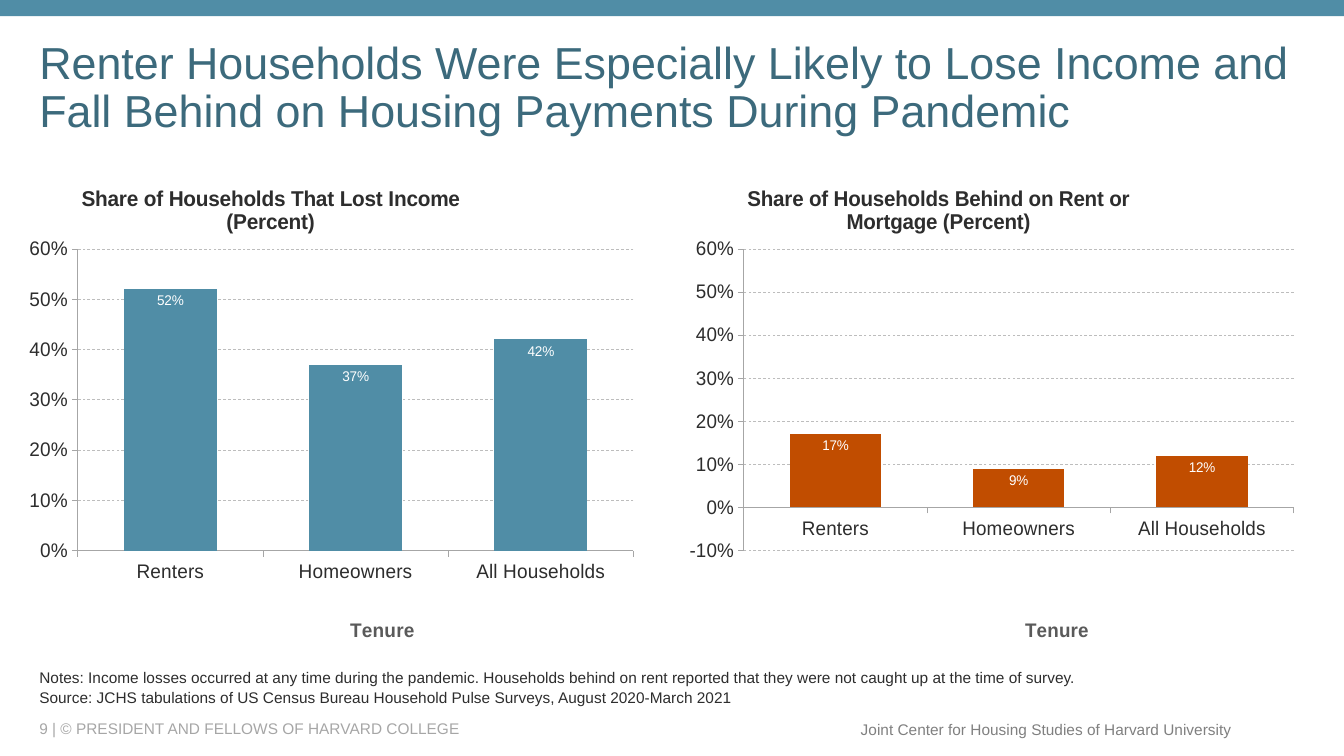
from pptx import Presentation
from pptx.chart.data import CategoryChartData
from pptx.dml.color import RGBColor
from pptx.enum.chart import XL_CHART_TYPE as ChartType, XL_LABEL_POSITION as LabelPosition
from pptx.enum.chart import XL_TICK_MARK as TickMark
from pptx.enum.dml import MSO_LINE as Dash
from pptx.enum.shapes import MSO_SHAPE as Shape
from pptx.enum.text import MSO_ANCHOR as Anchor, PP_ALIGN as Align
from pptx.oxml import parse_xml
from pptx.oxml.ns import nsdecls
from pptx.util import Pt

TEAL = RGBColor(0x50, 0x8D, 0xA6)
DARK_TEAL = RGBColor(0x3C, 0x6A, 0x7C)
ORANGE = RGBColor(0xC1, 0x4D, 0x00)
INK = RGBColor(0x2D, 0x2D, 0x2D)
CHARCOAL = RGBColor(0x5A, 0x5A, 0x5A)
GRAY = RGBColor(0x80, 0x80, 0x80)
LIGHT_GRAY = RGBColor(0xA6, 0xA6, 0xA6)
GRID_GRAY = RGBColor(0xBD, 0xBD, 0xBD)
WHITE = RGBColor(0xFF, 0xFF, 0xFF)

TENURES = ["Renters", "Homeowners", "All Households"]


class SlideBuilder:
    """Holds the text style and the page being filled."""

    font_name = "Arial"

    def __init__(self, page):
        self.page = page

    def style_font(self, font, size, color, bold=False):
        values = {"name": self.font_name, "size": Pt(size), "bold": bold}
        for name, value in values.items():
            setattr(font, name, value)
        font.color.rgb = color

    def bar(self, left, top, width, height, color):
        bar = self.page.shapes.add_shape(
            Shape.RECTANGLE, Pt(left), Pt(top), Pt(width), Pt(height))
        bar.shadow.inherit = False
        bar.fill.solid()
        bar.fill.fore_color.rgb = color
        bar.line.fill.background()

    def text(self, bounds, lines, size, color, anchor=Anchor.MIDDLE, wrap=True, **formats):
        box = self.page.shapes.add_textbox(*map(Pt, bounds))
        frame = box.text_frame
        frame.word_wrap = wrap
        frame.vertical_anchor = anchor
        for index, line in enumerate(lines):
            para = frame.paragraphs[0] if index == 0 else frame.add_paragraph()
            for name, value in formats.items():
                setattr(para, name, value)
            if index:
                para.space_before = Pt(1)
            span = para.add_run()
            span.text = line
            self.style_font(span.font, size, color)

    def layout(self, x, y, width=None, height=None):
        """Manual chart layout, as fractions of the chart area."""
        inner = '<c:layoutTarget val="inner"/>' if width else ""
        size = f'<c:w val="{width}"/><c:h val="{height}"/>' if width else ""
        return parse_xml(
            f'<c:layout {nsdecls("c")}><c:manualLayout>{inner}'
            '<c:xMode val="edge"/><c:yMode val="edge"/>'
            f'<c:x val="{x}"/><c:y val="{y}"/>{size}</c:manualLayout></c:layout>')

    def chart_title(self, title, text, size, color, x, y):
        para = title.text_frame.paragraphs[0]
        span = para.add_run()
        span.text = text
        para.alignment = Align.CENTER
        self.style_font(span.font, size, color, bold=True)
        element = title._element
        for old in element.xpath("c:layout"):
            element.remove(old)
        element.xpath("c:tx")[0].addnext(self.layout(x, y))

    def axis(self, axis):
        axis.major_tick_mark = TickMark.OUTSIDE
        axis.minor_tick_mark = TickMark.NONE
        self.style_font(axis.tick_labels.font, 14, INK)
        axis.format.line.color.rgb = LIGHT_GRAY
        axis.format.line.width = Pt(0.5)

    def column_chart(self, left, title, values, color, minimum, tenure_x):
        data = CategoryChartData(number_format="0%")
        data.categories = TENURES
        data.add_series("Series 1", values)
        chart = self.page.shapes.add_chart(
            ChartType.COLUMN_CLUSTERED, Pt(left), Pt(118.8), Pt(440), Pt(347.5), data).chart
        self.style_font(chart.font, 10, CHARCOAL)
        chart.has_legend = False
        chart.has_title = True
        self.chart_title(chart.chart_title, title, 15.3, INK, 0.05, 0.03)

        # Axes and gridlines
        tenure, share = chart.category_axis, chart.value_axis
        self.axis(tenure)
        self.axis(share)
        self.chart_title(tenure.axis_title, "Tenure", 14, CHARCOAL, tenure_x, 0.92)
        scale = {"minimum_scale": minimum, "maximum_scale": 0.6, "major_unit": 0.1}
        for name, value in scale.items():
            setattr(share, name, value)
        share.tick_labels.number_format = "0%"
        share.tick_labels.number_format_is_linked = False
        grid = share.major_gridlines.format.line
        grid.color.rgb = GRID_GRAY
        grid.width = Pt(0.5)
        grid.dash_style = Dash.DASH

        # Columns and their labels
        plot = chart.plots[0]
        plot.gap_width = 100
        plot.vary_by_categories = False
        series = plot.series[0]
        series.format.fill.solid()
        series.format.fill.fore_color.rgb = color
        labels = series.data_labels
        formats = {"show_value": True, "number_format": "0%",
                   "number_format_is_linked": False, "position": LabelPosition.INSIDE_END}
        for name, value in formats.items():
            setattr(labels, name, value)
        self.style_font(labels.font, 10, WHITE)

        # Plot area
        area = chart._chartSpace.xpath("c:chart/c:plotArea")[0]
        for old in area.xpath("c:layout"):
            area.remove(old)
        area.insert(0, self.layout(0.05, 0.17, 0.93, 0.62))


def main():
    deck = Presentation()
    deck.slide_width, deck.slide_height = Pt(960), Pt(540)
    builder = SlideBuilder(deck.slides.add_slide(deck.slide_layouts[6]))

    # Footer and top band
    builder.text((21, 513.4, 570, 14.4), ["9 | © PRESIDENT AND FELLOWS OF HARVARD COLLEGE"],
                 11, LIGHT_GRAY)
    builder.text((606.2, 510.5, 280.8, 20.9),
                 ["Joint Center for Housing Studies of Harvard University"],
                 11, GRAY, wrap=False, alignment=Align.RIGHT)
    builder.bar(0, 0, 960, 11.5, TEAL)

    # Headline
    builder.text((21, 47.5, 911, 54),
                 ["Renter Households Were Especially Likely to Lose Income and "
                  "Fall Behind on Housing Payments During Pandemic"],
                 32, DARK_TEAL, Anchor.BOTTOM, line_spacing=0.9)

    # Charts
    builder.column_chart(21, "Share of Households That Lost Income (Percent)",
                         (0.52, 0.37, 0.42), TEAL, 0, 0.5)
    builder.column_chart(492.5, "Share of Households Behind on Rent or Mortgage (Percent)",
                         (0.17, 0.09, 0.12), ORANGE, -0.1, 0.52)

    # Notes and source
    builder.text((21, 466.6, 846, 41.8),
                 ["Notes: Income losses occurred at any time during the pandemic. Households "
                  "behind on rent reported that they were not caught up at the time of survey.",
                  "Source: JCHS tabulations of US Census Bureau Household Pulse Surveys, "
                  "August 2020-March 2021"],
                 11, INK, Anchor.BOTTOM)

    deck.save("out.pptx")


if __name__ == "__main__":
    main()
